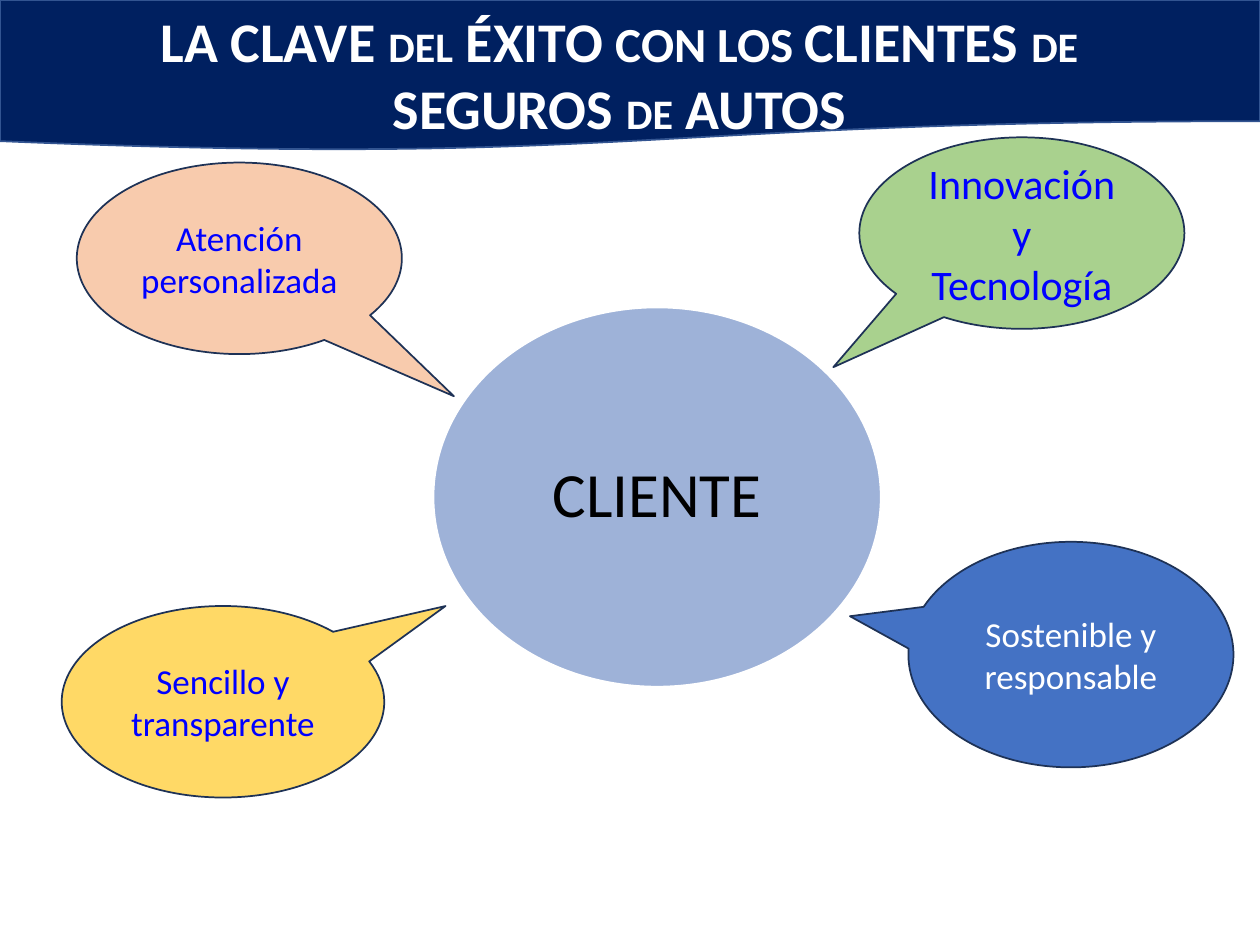
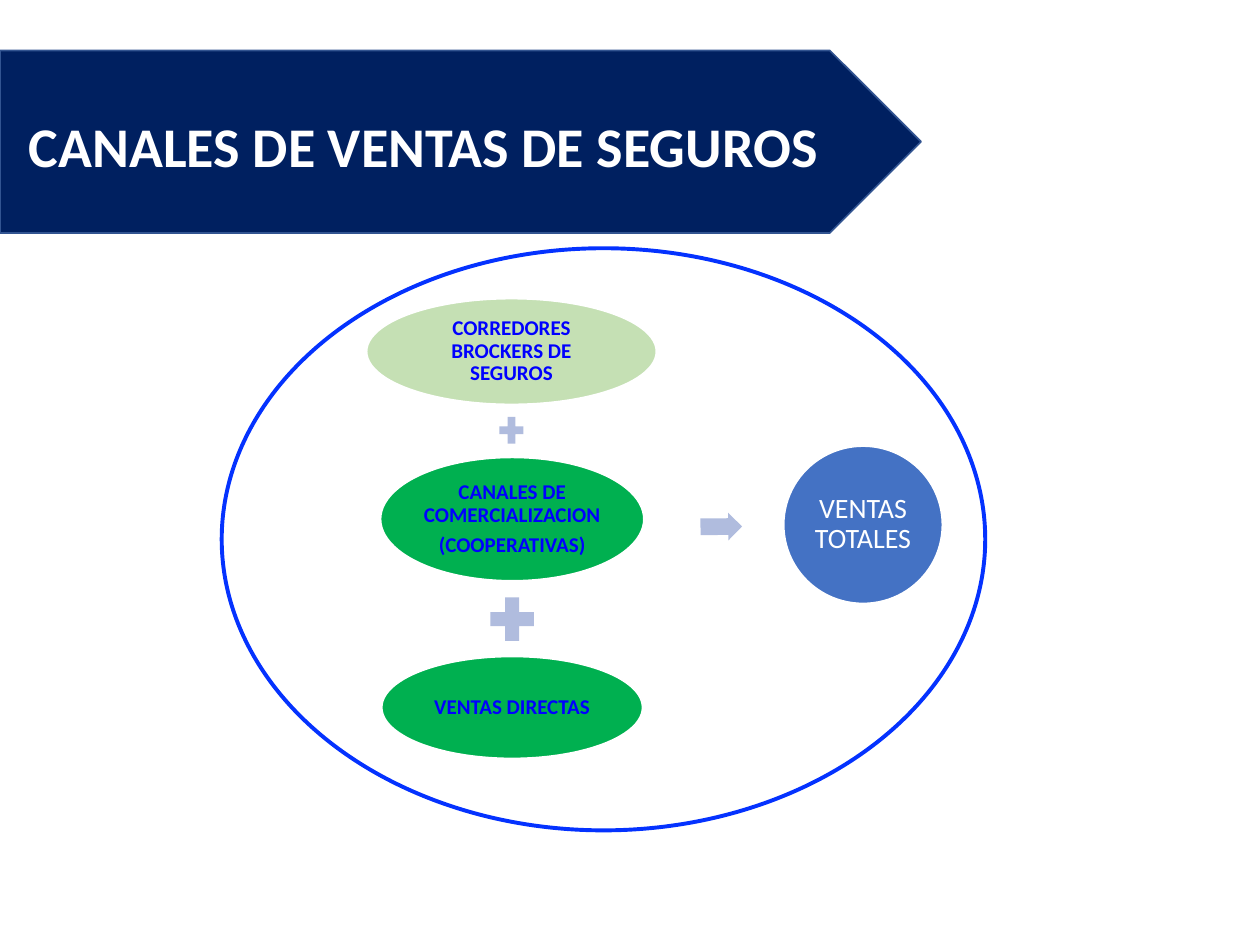
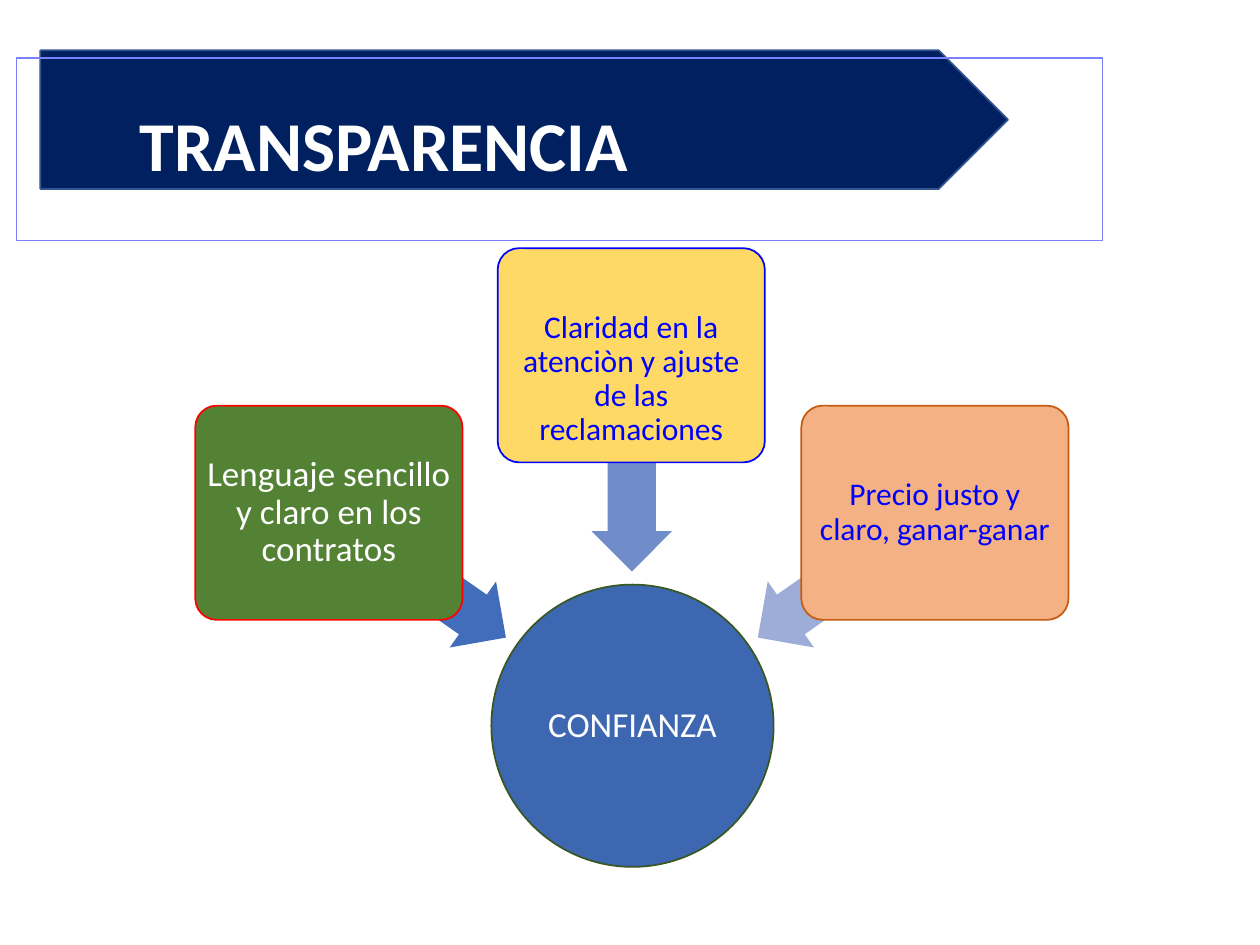
from dataclasses import dataclass

import lxml.etree
import pptx
import pptx.dml.color
import pptx.enum.shapes
import pptx.enum.text
import pptx.oxml.ns
import pptx.util

EMU_PER_PX = 9144
FONT = "Calibri"
SHAPE = pptx.enum.shapes.MSO_SHAPE
ALIGN = pptx.enum.text.PP_ALIGN
ANCHOR = pptx.enum.text.MSO_ANCHOR

COLORS = {
    "navy": "002060",
    "navy_line": "325491",
    "callout_line": "1E3256",
    "white": "FFFFFF",
    "black": "000000",
    "text_blue": "0000FF",
    "blue": "4472C4",
    "deep_blue": "3E67B2",
    "ring_blue": "0432FF",
    "frame_blue": "7A81FF",
    "pale_blue": "B0BCDE",
    "arrow_dark": "416DBB",
    "arrow_medium": "708CC9",
    "arrow_light": "9EADD8",
    "light_green": "A9D18E",
    "pale_green": "C5E0B4",
    "green": "00B050",
    "moss": "548235",
    "dark_green": "385723",
    "yellow": "FFD966",
    "peach": "F8CBAD",
    "orange": "F4B183",
    "dark_orange": "C55A11",
    "red": "FF0000",
}


@dataclass(frozen=True)
class Box:
    left: int
    top: int
    width: int
    height: int


@dataclass(frozen=True)
class Label:
    lines: tuple[str, ...]
    size: int
    color: str = "text_blue"
    bold: bool = False
    align: ALIGN = ALIGN.CENTER
    spacing: float = 0.9
    margins: tuple[int, int, int, int] = (10, 5, 10, 5)


@dataclass(frozen=True)
class Figure:
    kind: SHAPE
    box: Box
    fill: str | None = None
    line: str | None = None
    line_width: float = 1
    label: Label | None = None
    adjustments: tuple[float, ...] = ()
    rotation: float = 0
    opacity: int = 100


def px(length: int) -> pptx.util.Emu:
    return pptx.util.Emu(length * EMU_PER_PX)


def rgb(name: str) -> pptx.dml.color.RGBColor:
    return pptx.dml.color.RGBColor.from_string(COLORS[name])


def place(box: Box) -> tuple[pptx.util.Emu, ...]:
    return px(box.left), px(box.top), px(box.width), px(box.height)


def style_paragraph(paragraph, label: Label) -> None:
    paragraph.alignment = label.align
    paragraph.line_spacing = label.spacing
    paragraph.font.name = FONT
    paragraph.font.size = pptx.util.Pt(label.size)
    paragraph.font.bold = label.bold
    paragraph.font.color.rgb = rgb(label.color)


def write_label(shape, label: Label) -> None:
    frame = shape.text_frame
    frame.word_wrap = True
    frame.vertical_anchor = ANCHOR.MIDDLE
    left, top, right, bottom = label.margins
    frame.margin_left, frame.margin_top = px(left), px(top)
    frame.margin_right, frame.margin_bottom = px(right), px(bottom)
    for index, line in enumerate(label.lines):
        paragraph = frame.add_paragraph() if index else frame.paragraphs[0]
        paragraph.text = line
        if index:
            paragraph.space_before = pptx.util.Pt(round(label.size * 0.35))
        style_paragraph(paragraph, label)


def set_opacity(shape, percent: int) -> None:
    color = shape.fill._xPr.find(".//" + pptx.oxml.ns.qn("a:srgbClr"))
    alpha = lxml.etree.SubElement(color, pptx.oxml.ns.qn("a:alpha"))
    alpha.set("val", str(percent * 1000))


def draw(slide, figure: Figure) -> None:
    shape = slide.shapes.add_shape(figure.kind, *place(figure.box))
    shape.shadow.inherit = False
    shape.rotation = figure.rotation
    for index, value in enumerate(figure.adjustments):
        shape.adjustments[index] = value
    if figure.fill:
        shape.fill.solid()
        shape.fill.fore_color.rgb = rgb(figure.fill)
    else:
        shape.fill.background()
    if figure.opacity < 100:
        set_opacity(shape, figure.opacity)
    if figure.line:
        shape.line.color.rgb = rgb(figure.line)
        shape.line.width = pptx.util.Pt(figure.line_width)
    else:
        shape.line.fill.background()
    if figure.label:
        write_label(shape, figure.label)


def add_band(slide, kind: SHAPE, box: Box) -> None:
    draw(slide, Figure(kind, box, "navy", "navy_line"))


def add_title(slide, text: str, size: int, indent: int = 10, line: str | None = None) -> None:
    label = Label((text,), size, "white", True, ALIGN.LEFT, margins=(indent, 5, 10, 5))
    draw(slide, Figure(SHAPE.RECTANGLE, Box(13, 46, 862, 145), None, line, 0.75, label))


def tight(margin: int) -> tuple[int, int, int, int]:
    return margin, margin, margin, margin


def build_success_keys(slide) -> None:
    add_band(slide, SHAPE.FLOWCHART_DOCUMENT, Box(0, 0, 1000, 120))
    title = slide.shapes.add_textbox(*place(Box(44, 0, 895, 118)))
    title.text_frame.word_wrap = True
    paragraph = title.text_frame.paragraphs[0]
    style_paragraph(paragraph, Label((), 32, "white", True, spacing=1.0))
    title_runs = (
        ("LA CLAVE ", 32), ("DEL", 24), (" ÉXITO ", 32), ("CON LOS ", 28), ("CLIENTES ", 32),
        ("DE", 24), (" SEGUROS ", 32), ("DE", 24), (" AUTOS", 32),
    )
    for text, size in title_runs:
        run = paragraph.add_run()
        run.text = text
        run.font.size = pptx.util.Pt(size)

    client = Label(("CLIENTE",), 36, "black", margins=tight(5))
    draw(slide, Figure(SHAPE.OVAL, Box(344, 244, 355, 301), "deep_blue", "white",
                       label=client, opacity=50))

    callouts = (
        (Box(682, 109, 258, 152), "light_green", (-0.58, 0.7), "Innovación y Tecnología", 24, "text_blue"),
        (Box(721, 430, 258, 179), "blue", (-0.68, -0.17), "Sostenible y responsable", 20, "white"),
        (Box(49, 481, 256, 152), "yellow", (0.69, -0.5), "Sencillo y transparente", 20, "text_blue"),
        (Box(61, 129, 258, 152), "peach", (0.66, 0.72), "Atención personalizada", 20, "text_blue"),
    )
    for box, fill, tail, text, size, color in callouts:
        label = Label((text,), size, color, spacing=1.0)
        draw(slide, Figure(SHAPE.OVAL_CALLOUT, box, fill, "callout_line",
                           label=label, adjustments=tail))


def build_sales_channels(slide) -> None:
    add_band(slide, SHAPE.PENTAGON, Box(0, 40, 731, 145))
    add_title(slide, "CANALES DE VENTAS DE SEGUROS", 32)

    column_center = 406
    channels = (
        (237, 230, 84, "pale_green", ("CORREDORES BROCKERS DE SEGUROS",)),
        (363, 209, 98, "green", ("CANALES DE COMERCIALIZACION", "(COOPERATIVAS)")),
        (521, 207, 81, "green", ("VENTAS DIRECTAS",)),
    )
    for top, width, height, fill, lines in channels:
        box = Box(column_center - width // 2, top, width, height)
        label = Label(lines, 12, bold=True, margins=tight(2))
        draw(slide, Figure(SHAPE.OVAL, box, fill, "white", label=label))
    for top, width, height in ((327, 26, 29), (468, 47, 47)):
        box = Box(column_center - width // 2, top, width, height)
        draw(slide, Figure(SHAPE.MATH_PLUS, box, "pale_blue"))

    draw(slide, Figure(SHAPE.RIGHT_ARROW, Box(556, 407, 33, 22), "pale_blue",
                       adjustments=(0.6, 0.5), rotation=359.4))
    total = Label(("VENTAS TOTALES",), 16, "white", margins=tight(2))
    draw(slide, Figure(SHAPE.OVAL, Box(622, 354, 126, 125), "blue", "white", label=total))
    draw(slide, Figure(SHAPE.OVAL, Box(176, 197, 606, 462), None, "ring_blue", 2.25))


def build_transparency(slide) -> None:
    add_band(slide, SHAPE.PENTAGON, Box(32, 40, 768, 110))
    add_title(slide, "TRANSPARENCIA", 40, indent=98, line="frame_blue")

    trust = Label(("CONFIANZA",), 20, "white", margins=tight(1))
    draw(slide, Figure(SHAPE.OVAL, Box(390, 464, 224, 224), "deep_blue", "dark_green", label=trust))

    pillars = (
        (322, "moss", "red", 425, 215, "arrow_dark",
         Label(("Lenguaje sencillo y claro en los contratos",), 20, "white", margins=tight(4))),
        (197, "yellow", "text_blue", 336, 270, "arrow_medium",
         Label(("Claridad en la atenciòn y ajuste de las reclamaciones",), 18, margins=(4, 42, 4, 4))),
        (322, "orange", "dark_orange", 425, 325, "arrow_light",
         Label(("Precio justo y claro, ganar-ganar",), 18, margins=tight(4))),
    )
    for index, (top, fill, line, arrow_top, rotation, arrow_fill, label) in enumerate(pillars):
        draw(slide, Figure(SHAPE.LEFT_ARROW, Box(246 + index * 170, arrow_top, 171, 64), arrow_fill,
                           adjustments=(0.6, 0.5), rotation=rotation))
        draw(slide, Figure(SHAPE.ROUNDED_RECTANGLE, Box(155 + index * 481 // 2, top, 212, 170),
                           fill, line, label=label, adjustments=(0.1,)))


def main() -> None:
    presentation = pptx.Presentation()
    presentation.slide_width = px(1000)
    presentation.slide_height = px(750)
    for build in (build_success_keys, build_sales_channels, build_transparency):
        build(presentation.slides.add_slide(presentation.slide_layouts[6]))
    presentation.save("out.pptx")


if __name__ == "__main__":
    main()
